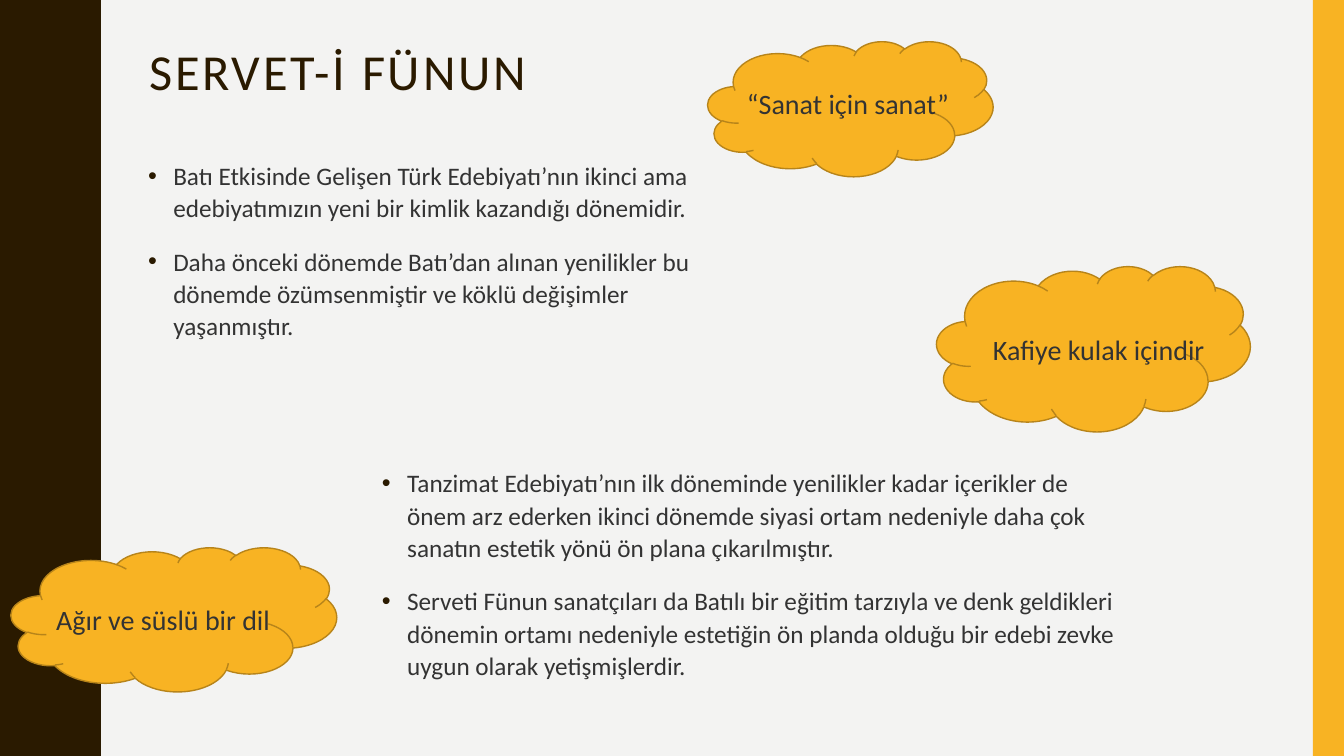
from lxml import etree
from pptx import Presentation
from pptx.dml.color import RGBColor
from pptx.enum.shapes import MSO_SHAPE
from pptx.enum.text import MSO_ANCHOR, MSO_AUTO_SIZE, PP_ALIGN
from pptx.oxml.ns import qn
from pptx.util import Inches, Pt

RECTANGLE, CLOUD = MSO_SHAPE.RECTANGLE, MSO_SHAPE.CLOUD
TOP, LEFT = MSO_ANCHOR.TOP, PP_ALIGN.LEFT
NO_FIT, GROW = MSO_AUTO_SIZE.NONE, MSO_AUTO_SIZE.SHAPE_TO_FIT_TEXT

TITLE = "SERVET-İ FÜNUN"
TITLE_BOX = (1.38, 0.42, 9.89, 0.77)
BULLET_BLOCKS = [
    ((1.37, 1.52, 5.59, 2.61), [
        "Batı Etkisinde Gelişen Türk Edebiyatı’nın ikinci ama edebiyatımızın yeni bir "
        "kimlik kazandığı dönemidir.",
        "Daha önceki dönemde Batı’dan alınan yenilikler bu dönemde özümsenmiştir ve "
        "köklü değişimler yaşanmıştır.",
    ]),
    ((3.69, 4.57, 7.63, 2.18), [
        "Tanzimat Edebiyatı’nın ilk döneminde yenilikler kadar içerikler de önem arz "
        "ederken ikinci dönemde siyasi ortam nedeniyle daha çok sanatın estetik yönü ön "
        "plana çıkarılmıştır.",
        "Serveti Fünun sanatçıları da Batılı bir eğitim tarzıyla ve denk geldikleri "
        "dönemin ortamı nedeniyle estetiğin ön planda olduğu bir edebi zevke uygun "
        "olarak yetişmişlerdir.",
    ]),
]
MOTTOS = [
    ("Kafiye kulak içindir", (9.29, 2.64, 3.11, 1.64), (9.75, 3.25, 3.02, 0.44)),
    ("Ağır ve süslü bir dil", (0.11, 5.43, 3.23, 1.43), (0.46, 5.93, 8.97, 0.44)),
    ("“Sanat için sanat”", (7.02, 0.41, 2.83, 1.34), (7.31, 0.81, 2.6, 0.44)),
]
BROWN, AMBER, OUTLINE, INK, PAPER = "2A1A00", "F8B323", "B7841A", "333333", "F3F3F2"
WAVE_COUNT, WAVE_LENGTH = 5, 1.5
HALF_WAVE = [
    (0.78, 0), (0.78, 0.07), (0.79, 0.14), (0.8, 0.2), (0.81, 0.25), (0.83, 0.29),
    (0.85, 0.33), (0.87, 0.38), (0.89, 0.42), (0.91, 0.46), (0.93, 0.5),
    (0.95, 0.55), (0.96, 0.61), (0.97, 0.68), (0.97, 0.75),
]
BULLET_FORMAT = {"line_spacing": 1.07, "space_before": Pt(7), "space_after": Pt(8)}


def color(value):
    return RGBColor.from_string(value)


def box(lengths):
    return [Inches(length) for length in lengths]


def paint(shape, fill, outline=None):
    shape.shadow.inherit = False
    shape.fill.solid()
    shape.fill.fore_color.rgb = color(fill)
    if outline:
        shape.line.color.rgb = color(outline)
        shape.line.width = Pt(1)
    else:
        shape.line.fill.background()


def write(frame, texts, size, ink, fit, paragraph_format):
    for name, value in {"word_wrap": True, "auto_size": fit, "vertical_anchor": TOP}.items():
        setattr(frame, name, value)
    for index, text in enumerate(texts):
        paragraph = frame.add_paragraph() if index else frame.paragraphs[0]
        paragraph.alignment = LEFT
        for name, value in paragraph_format.items():
            setattr(paragraph, name, value)
        run = paragraph.add_run()
        run.text = text
        for name, value in {"name": "Calibri", "size": Pt(size), "bold": False}.items():
            setattr(run.font, name, value)
        run.font.color.rgb = color(ink)


def add_bullet(paragraph):
    properties = paragraph._p.get_or_add_pPr()
    properties.set("marL", str(Inches(0.25)))
    properties.set("indent", str(Inches(-0.25)))
    bullet_color = etree.SubElement(properties, qn("a:buClr"))
    etree.SubElement(bullet_color, qn("a:srgbClr"), val=BROWN)
    etree.SubElement(properties, qn("a:buFont"), typeface="Arial")
    etree.SubElement(properties, qn("a:buChar"), char="•")


def add_wave(shapes):
    falling = [(x, WAVE_LENGTH - y) for x, y in reversed(HALF_WAVE[:-1])]
    edge = [(x, y + wave * WAVE_LENGTH)
            for wave in range(WAVE_COUNT) for x, y in HALF_WAVE + falling]
    builder = shapes.build_freeform(0, 0, scale=Inches(1))
    builder.add_line_segments(edge + [(0, WAVE_COUNT * WAVE_LENGTH)], close=True)
    paint(builder.convert_to_shape(), BROWN)


def main():
    deck = Presentation()
    deck.slide_width, deck.slide_height = box((13.33, 7.5))
    slide = deck.slides.add_slide(deck.slide_layouts[5])
    slide.background.fill.solid()
    slide.background.fill.fore_color.rgb = color(PAPER)
    shapes = slide.shapes

    add_wave(shapes)
    paint(shapes.add_shape(RECTANGLE, *box((13.02, 0, 0.31, 7.5))), AMBER)
    for _, cloud_box, _ in MOTTOS:
        paint(shapes.add_shape(CLOUD, *box(cloud_box)), AMBER, OUTLINE)

    heading = shapes.title
    heading.left, heading.top, heading.width, heading.height = box(TITLE_BOX)
    write(heading.text_frame, [TITLE], 36, BROWN, NO_FIT, {"line_spacing": 0.9})
    heading.text_frame.paragraphs[0].runs[0].font._element.set("spc", "200")

    for block_box, points in BULLET_BLOCKS:
        frame = shapes.add_textbox(*box(block_box)).text_frame
        write(frame, points, 18, INK, NO_FIT, BULLET_FORMAT)
        for paragraph in frame.paragraphs:
            add_bullet(paragraph)

    for motto, _, motto_box in MOTTOS:
        frame = shapes.add_textbox(*box(motto_box)).text_frame
        write(frame, [motto], 20, INK, GROW, {})

    deck.save("out.pptx")


if __name__ == "__main__":
    main()
